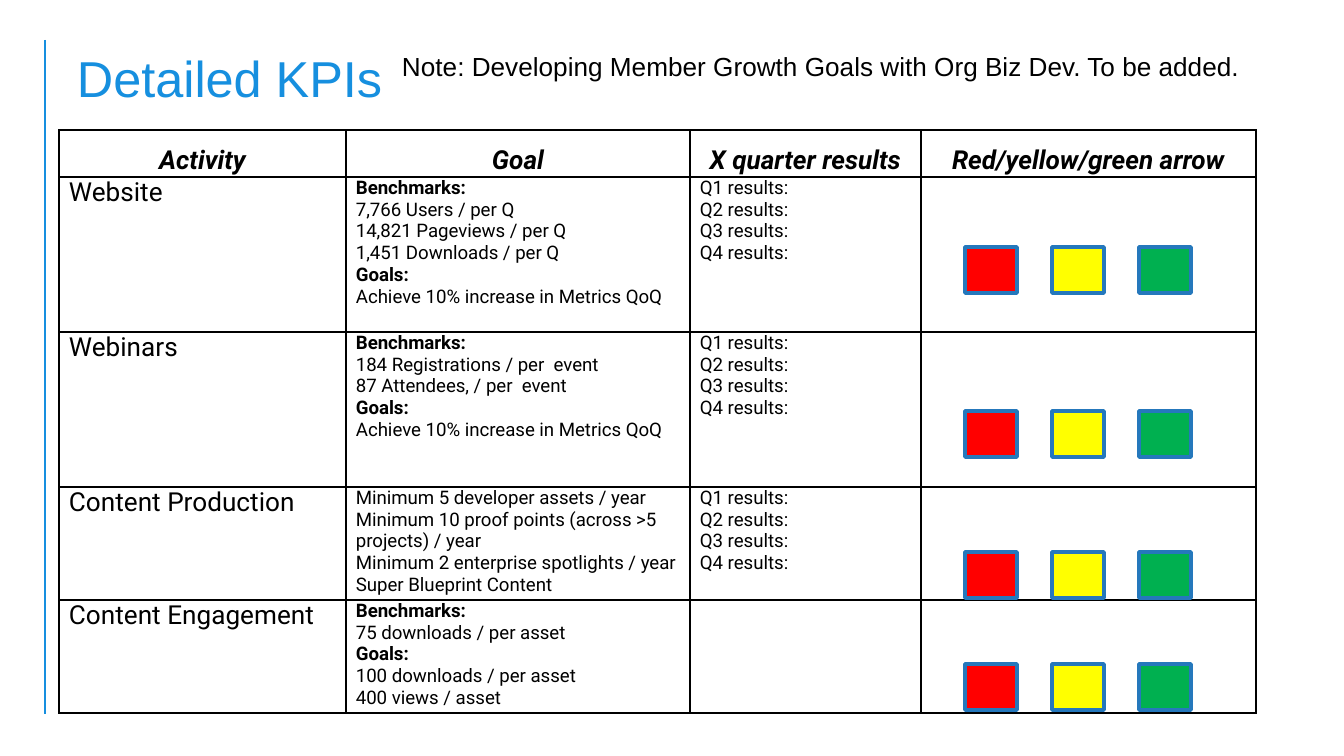
from dataclasses import dataclass

from lxml.etree import SubElement
from pptx import Presentation
from pptx.dml.color import RGBColor as RGB
from pptx.enum.shapes import MSO_CONNECTOR as Connector, MSO_SHAPE as Shape
from pptx.enum.text import MSO_ANCHOR as Anchor, PP_ALIGN as Align
from pptx.oxml.ns import qn
from pptx.util import Pt


@dataclass(frozen=True)
class Theme:
    accent: str = "168FDF"
    ink: str = "000000"
    paper: str = "FFFFFF"
    status_line: str = "2578BC"
    heading_font: str = "Arial"
    table_font: str = "Roboto"
    title_size: int = 27
    label_size: int = 14
    detail_size: int = 10


THEME = Theme()
TITLE = "Detailed KPIs"
NOTE = "Note: Developing Member Growth Goals with Org Biz Dev. To be added."
HEADERS = ["Activity", "Goal", "X quarter results", "Red/yellow/green arrow"]
QUARTERS = [f"Q{number} results:" for number in range(1, 5)]
SUBHEADS = {"Benchmarks:", "Goals:"}
KPIS = [
    ("Website", [
        "Benchmarks:",
        "7,766 Users / per Q",
        "14,821 Pageviews / per Q",
        "1,451 Downloads / per Q",
        "Goals:",
        "Achieve 10% increase in Metrics QoQ",
    ], QUARTERS),
    ("Webinars", [
        "Benchmarks:",
        "184 Registrations / per  event",
        "87 Attendees, / per  event",
        "Goals:",
        "Achieve 10% increase in Metrics QoQ",
    ], QUARTERS),
    ("Content Production", [
        "Minimum 5 developer assets / year",
        "Minimum 10 proof points (across >5 projects) / year",
        "Minimum 2 enterprise spotlights / year",
        "Super Blueprint Content",
    ], QUARTERS),
    ("Content Engagement", [
        "Benchmarks:",
        "75 downloads / per asset",
        "Goals:",
        "100 downloads / per asset",
        "400 views / asset",
    ], []),
]
STATUS_COLORS = ["FF0000", "FFFF00", "00B050"]
STATUS_TOPS = [247, 411, 552, 664]
STATUS_LEFT, STATUS_STEP = 965, 87
STATUS_WIDTH, STATUS_HEIGHT = 52, 46
TABLE_LEFT, TABLE_TOP = 59, 130
COLUMNS = [287, 344, 231, 335]
ROWS = [46, 155, 155, 113, 113]


def px(length):
    return round(length * 914400 / 134.4)


def style(paragraph, font, size, color, bold=False, italic=False):
    for run in paragraph.runs:
        run.font.name = font
        run.font.size = Pt(size)
        run.font.bold = bold
        run.font.italic = italic
        run.font.color.rgb = RGB.from_string(color)


def add_heading(slide, text, box, size, color, inset, anchor):
    frame = slide.shapes.add_textbox(*map(px, box)).text_frame
    frame.word_wrap = True
    frame.vertical_anchor = anchor
    frame.margin_left, frame.margin_top = px(inset[0]), px(inset[1])
    frame.margin_right, frame.margin_bottom = px(8), px(inset[1])
    frame.text = text
    style(frame.paragraphs[0], THEME.heading_font, size, color)
    return frame.paragraphs[0]


def add_borders(cell):
    properties = cell._tc.get_or_add_tcPr()
    for side in ("a:lnL", "a:lnR", "a:lnT", "a:lnB"):
        border = SubElement(properties, qn(side), w=str(Pt(1)))
        fill = SubElement(border, qn("a:solidFill"))
        SubElement(fill, qn("a:srgbClr"), val=THEME.ink)


def fill_cell(cell, lines, size, header=False):
    add_borders(cell)
    cell.fill.solid()
    cell.fill.fore_color.rgb = RGB.from_string(THEME.paper)
    cell.margin_left = cell.margin_right = px(5 if header else 10)
    cell.margin_top = cell.margin_bottom = 0
    cell.text_frame.text = "\n".join(lines)
    for paragraph in cell.text_frame.paragraphs:
        bold = header or paragraph.text in SUBHEADS
        style(paragraph, THEME.table_font, size, THEME.ink, bold, header)
        if header:
            paragraph.alignment = Align.CENTER
            paragraph.line_spacing = 1.5


def add_kpi_table(slide):
    table = slide.shapes.add_table(
        len(ROWS), len(COLUMNS), px(TABLE_LEFT), px(TABLE_TOP),
        px(sum(COLUMNS)), px(sum(ROWS))).table
    table.first_row = table.horz_banding = False
    for column, width in zip(table.columns, COLUMNS):
        column.width = px(width)
    for row, height in zip(table.rows, ROWS):
        row.height = px(height)
    for index, header in enumerate(HEADERS):
        fill_cell(table.cell(0, index), [header], THEME.label_size, True)
    for row, (activity, goals, results) in enumerate(KPIS, 1):
        for column, lines in enumerate([[activity], goals, results, []]):
            size = THEME.detail_size if column else THEME.label_size
            fill_cell(table.cell(row, column), lines, size)


def add_statuses(slide):
    for top in STATUS_TOPS:
        for index, color in enumerate(STATUS_COLORS):
            status = slide.shapes.add_shape(
                Shape.RECTANGLE, px(STATUS_LEFT + index * STATUS_STEP), px(top),
                px(STATUS_WIDTH), px(STATUS_HEIGHT))
            status.shadow.inherit = False
            status.fill.solid()
            status.fill.fore_color.rgb = RGB.from_string(color)
            status.line.color.rgb = RGB.from_string(THEME.status_line)
            status.line.width = Pt(2)


def add_margin_rule(slide):
    rule = slide.shapes.add_connector(
        Connector.STRAIGHT, px(45), px(40), px(45), px(714))
    rule.line.color.rgb = RGB.from_string(THEME.accent)
    rule.line.width = Pt(0.75)
    SubElement(rule._element.spPr, qn("a:effectLst"))


def main():
    deck = Presentation()
    deck.slide_width, deck.slide_height = px(1344), px(756)
    slide = deck.slides.add_slide(deck.slide_layouts[6])
    add_margin_rule(slide)
    title = add_heading(slide, TITLE, (69, 40, 1205, 82), THEME.title_size,
                        THEME.accent, (8, 8), Anchor.MIDDLE)
    title.line_spacing = 0.9
    add_kpi_table(slide)
    add_heading(slide, NOTE, (370, 43, 930, 46), THEME.label_size,
                THEME.ink, (32, 7), Anchor.TOP)
    add_statuses(slide)
    deck.save("out.pptx")


if __name__ == "__main__":
    main()
